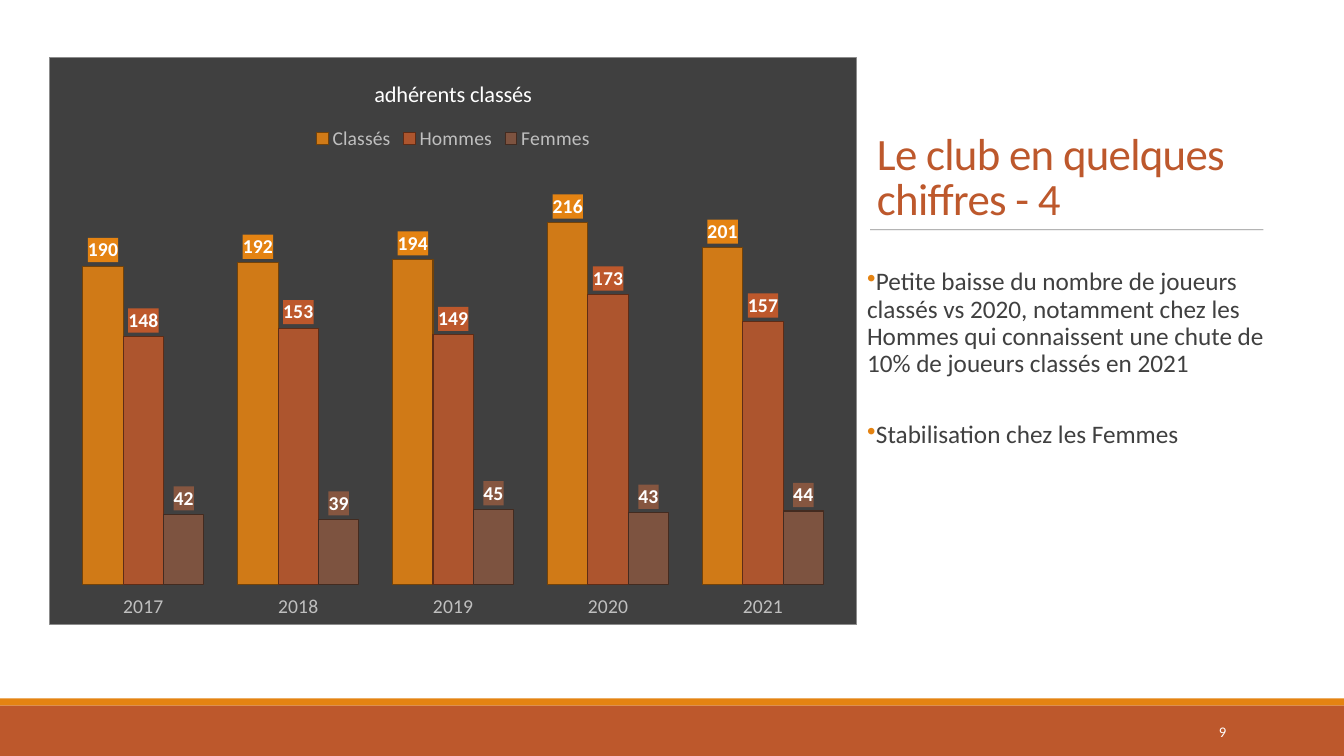
from dataclasses import dataclass

from pptx import Presentation
from pptx.chart.data import CategoryChartData
from pptx.dml.color import RGBColor
from pptx.enum.chart import XL_CHART_TYPE, XL_LABEL_POSITION, XL_LEGEND_POSITION, XL_TICK_LABEL_POSITION, XL_TICK_MARK
from pptx.enum.shapes import MSO_CONNECTOR, MSO_SHAPE
from pptx.enum.text import MSO_ANCHOR, PP_ALIGN
from pptx.oxml import parse_xml
from pptx.oxml.ns import nsdecls, qn
from pptx.util import Inches, Pt

COLUMNS = XL_CHART_TYPE.COLUMN_CLUSTERED
OUTSIDE_END = XL_LABEL_POSITION.OUTSIDE_END
LEGEND_TOP = XL_LEGEND_POSITION.TOP
NO_TICK = XL_TICK_MARK.NONE
LABELS_LOW = XL_TICK_LABEL_POSITION.LOW
RECTANGLE = MSO_SHAPE.RECTANGLE
STRAIGHT = MSO_CONNECTOR.STRAIGHT
TOP, MIDDLE, BOTTOM = MSO_ANCHOR.TOP, MSO_ANCHOR.MIDDLE, MSO_ANCHOR.BOTTOM
LEFT, RIGHT = PP_ALIGN.LEFT, PP_ALIGN.RIGHT


@dataclass(frozen=True)
class Theme:
    font: str = "Calibri"
    orange: str = "E48312"
    rust: str = "BD582C"
    brown: str = "865640"
    dark: str = "404040"
    pale: str = "BFBFBF"
    white: str = "FFFFFF"
    border: str = "8C8C8C"
    rule: str = "808080"
    title_size: float = 32
    body_size: float = 18
    chart_title_size: float = 16
    chart_size: float = 14
    number_size: float = 10.5


THEME = Theme()
YEARS = ["2017", "2018", "2019", "2020", "2021"]
MEMBERS = [
    ("Classés", [190, 192, 194, 216, 201], THEME.orange, "724209"),
    ("Hommes", [148, 153, 149, 173, 157], THEME.rust, "5E2C16"),
    ("Femmes", [42, 39, 45, 43, 44], THEME.brown, "432B20"),
]
REMARKS = [
    "Petite baisse du nombre de joueurs classés vs 2020, notamment chez les "
    "Hommes qui connaissent une chute de 10% de joueurs classés en 2021",
    "Stabilisation chez les Femmes",
]


def set_values(target, values):
    for name, value in values.items():
        setattr(target, name, value)


def set_font(font, size, color, bold=False):
    set_values(font, {"name": THEME.font, "size": Pt(size), "bold": bold})
    font.color.rgb = RGBColor.from_string(color)


def set_alpha(element, percent):
    for color in element.iter(qn("a:srgbClr")):
        color.append(parse_xml(f'<a:alpha {nsdecls("a")} val="{percent * 1000}"/>'))


def area_format(fill, line=None):
    outline = f'<a:ln w="6350"><a:solidFill><a:srgbClr val="{line}"/></a:solidFill></a:ln>' if line else ""
    return parse_xml(
        f'<c:spPr {nsdecls("c", "a")}><a:solidFill><a:srgbClr val="{fill}"/></a:solidFill>{outline}</c:spPr>'
    )


def add_band(slide, top, height, color):
    band = slide.shapes.add_shape(RECTANGLE, 0, Inches(top), Inches(13.33), Inches(height))
    band.shadow.inherit = False
    band.fill.solid()
    band.fill.fore_color.rgb = RGBColor.from_string(color)
    band.line.fill.background()


def add_rule(slide, left, right, top):
    rule = slide.shapes.add_connector(STRAIGHT, Inches(left), Inches(top), Inches(right), Inches(top))
    rule.line.width = Pt(0.5)
    rule.line.color.rgb = RGBColor.from_string(THEME.rule)
    properties = rule._element.spPr
    set_alpha(properties, 90)
    properties.append(parse_xml(f'<a:effectLst {nsdecls("a")}/>'))


def add_text(slide, box, lines, size, color, frame_format, paragraph_format, bullet=None, spacing=None):
    frame = slide.shapes.add_textbox(*map(Inches, box)).text_frame
    set_values(frame, {"word_wrap": True, **frame_format})
    for index, line in enumerate(lines):
        paragraph = frame.paragraphs[0] if index == 0 else frame.add_paragraph()
        set_values(paragraph, paragraph_format)
        if bullet:
            properties = paragraph._p.get_or_add_pPr()
            properties.append(parse_xml(
                f'<a:buClr {nsdecls("a")}><a:srgbClr val="{bullet}"/></a:buClr>'))
            properties.append(parse_xml(f'<a:buChar {nsdecls("a")} char="•"/>'))
        run = paragraph.add_run()
        run.text = line
        set_font(run.font, size, color)
        if spacing:
            run._r.get_or_add_rPr().set("spc", str(spacing))


def style_series(series, color, outline):
    series.smooth = False if hasattr(series, "smooth") else None
    series.format.fill.solid()
    series.format.fill.fore_color.rgb = RGBColor.from_string(color)
    set_alpha(series._element.spPr, 88)
    series.format.line.width = Pt(0.75)
    series.format.line.color.rgb = RGBColor.from_string(outline)
    labels = series.data_labels
    set_values(labels, {"show_value": True, "position": OUTSIDE_END})
    set_font(labels.font, THEME.chart_size, THEME.white, bold=True)
    labels._element.find(qn("c:txPr")).addprevious(area_format(color))


def place_plot(chart, x, y, width, height):
    area = chart._chartSpace.chart.plotArea
    for layout in area.findall(qn("c:layout")):
        area.remove(layout)
    area.insert(0, parse_xml(
        f'<c:layout {nsdecls("c")}><c:manualLayout><c:layoutTarget val="inner"/>'
        f'<c:xMode val="edge"/><c:yMode val="edge"/><c:x val="{x}"/><c:y val="{y}"/>'
        f'<c:w val="{width}"/><c:h val="{height}"/></c:manualLayout></c:layout>'))


def add_members_chart(slide, box):
    data = CategoryChartData()
    data.categories = YEARS
    for name, values, _, _ in MEMBERS:
        data.add_series(name, values)
    chart = slide.shapes.add_chart(COLUMNS, *map(Inches, box), data).chart
    set_font(chart.font, THEME.chart_size, THEME.pale)
    chart._chartSpace.chart.addnext(area_format(THEME.dark, THEME.border))

    chart.has_title = True
    heading = chart.chart_title.text_frame
    heading.text = "adhérents classés"
    set_font(heading.paragraphs[0].runs[0].font, THEME.chart_title_size, THEME.white)
    chart.has_legend = True
    set_values(chart.legend, {"position": LEGEND_TOP, "include_in_layout": False})
    set_font(chart.legend.font, THEME.chart_size, THEME.pale)

    years_axis = chart.category_axis
    set_values(years_axis, {"major_tick_mark": NO_TICK, "tick_label_position": LABELS_LOW})
    years_axis.format.line.fill.background()
    set_font(years_axis.tick_labels.font, THEME.chart_size, THEME.pale)
    set_values(chart.value_axis, {
        "visible": False, "has_major_gridlines": False, "minimum_scale": 0, "maximum_scale": 250})

    plot = chart.plots[0]
    set_values(plot, {"gap_width": 84, "overlap": 0, "vary_by_categories": False})
    for series, (_, _, color, outline) in zip(plot.series, MEMBERS):
        style_series(series, color, outline)
    place_plot(chart, 0.02, 0.19, 0.96, 0.74)


def main():
    presentation = Presentation()
    set_values(presentation, {"slide_width": Inches(13.33), "slide_height": Inches(7.5)})
    slide = presentation.slides.add_slide(presentation.slide_layouts[6])
    add_text(slide, (8.6, 0.69, 4.04, 1.59), ["Le club en quelques chiffres - 4"],
             THEME.title_size, THEME.rust, {"vertical_anchor": BOTTOM},
             {"alignment": LEFT, "line_spacing": 0.85}, spacing=-50)
    add_rule(slide, 8.63, 12.53, 2.28)
    add_text(slide, (8.6, 2.62, 4.04, 4.01), REMARKS, THEME.body_size, THEME.dark,
             {"vertical_anchor": TOP, "margin_left": 0, "margin_right": 0},
             {"alignment": LEFT, "line_spacing": 0.9, "space_after": Pt(31.5)}, bullet=THEME.orange)
    add_band(slide, 6.93, 0.07, THEME.orange)
    add_band(slide, 7, 0.5, THEME.rust)
    add_text(slide, (10.83, 7.06, 1.43, 0.4), ["9"], THEME.number_size, THEME.white,
             {"vertical_anchor": MIDDLE}, {"alignment": RIGHT})
    add_members_chart(slide, (0.49, 0.57, 8.01, 5.63))
    presentation.save("out.pptx")


if __name__ == "__main__":
    main()
